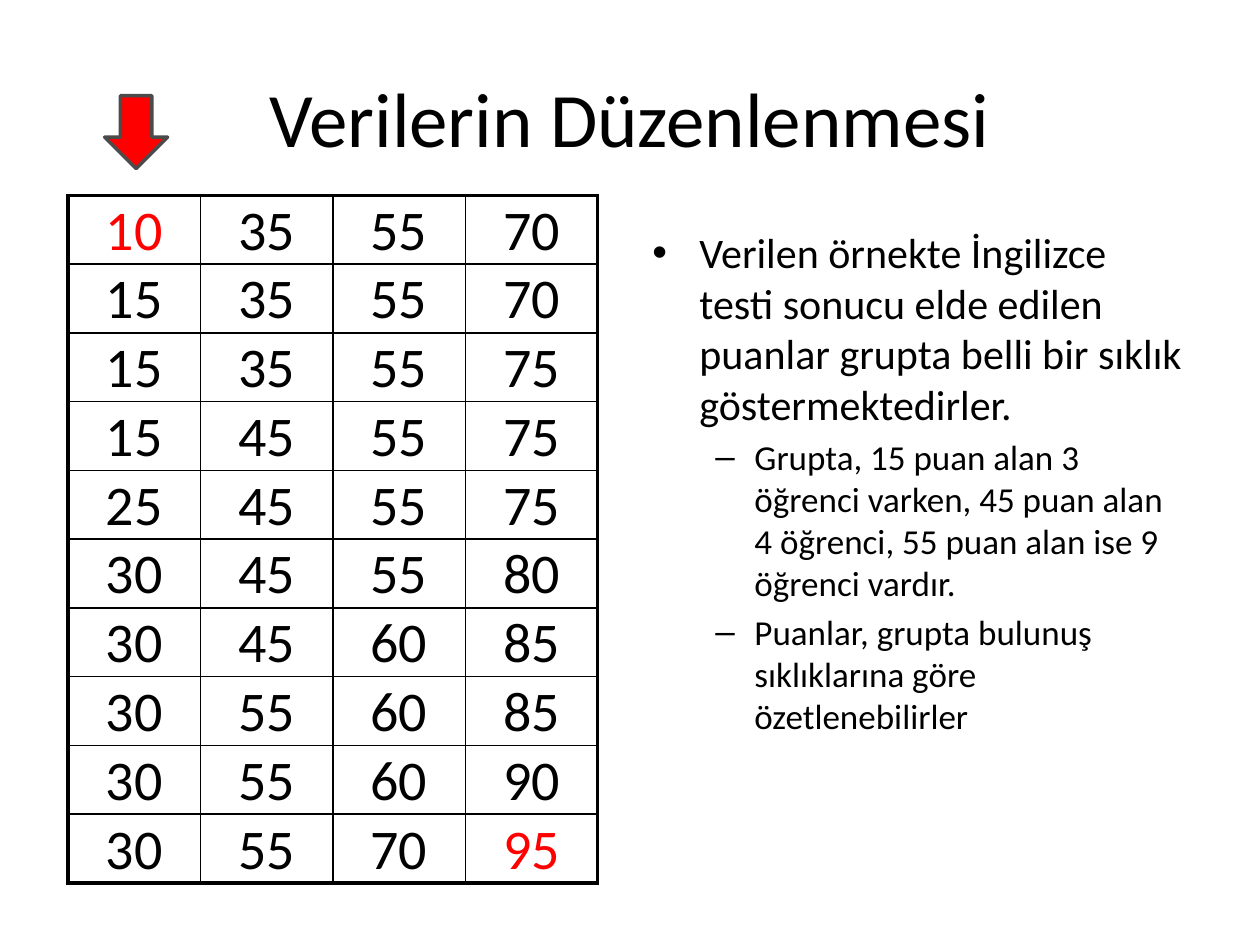
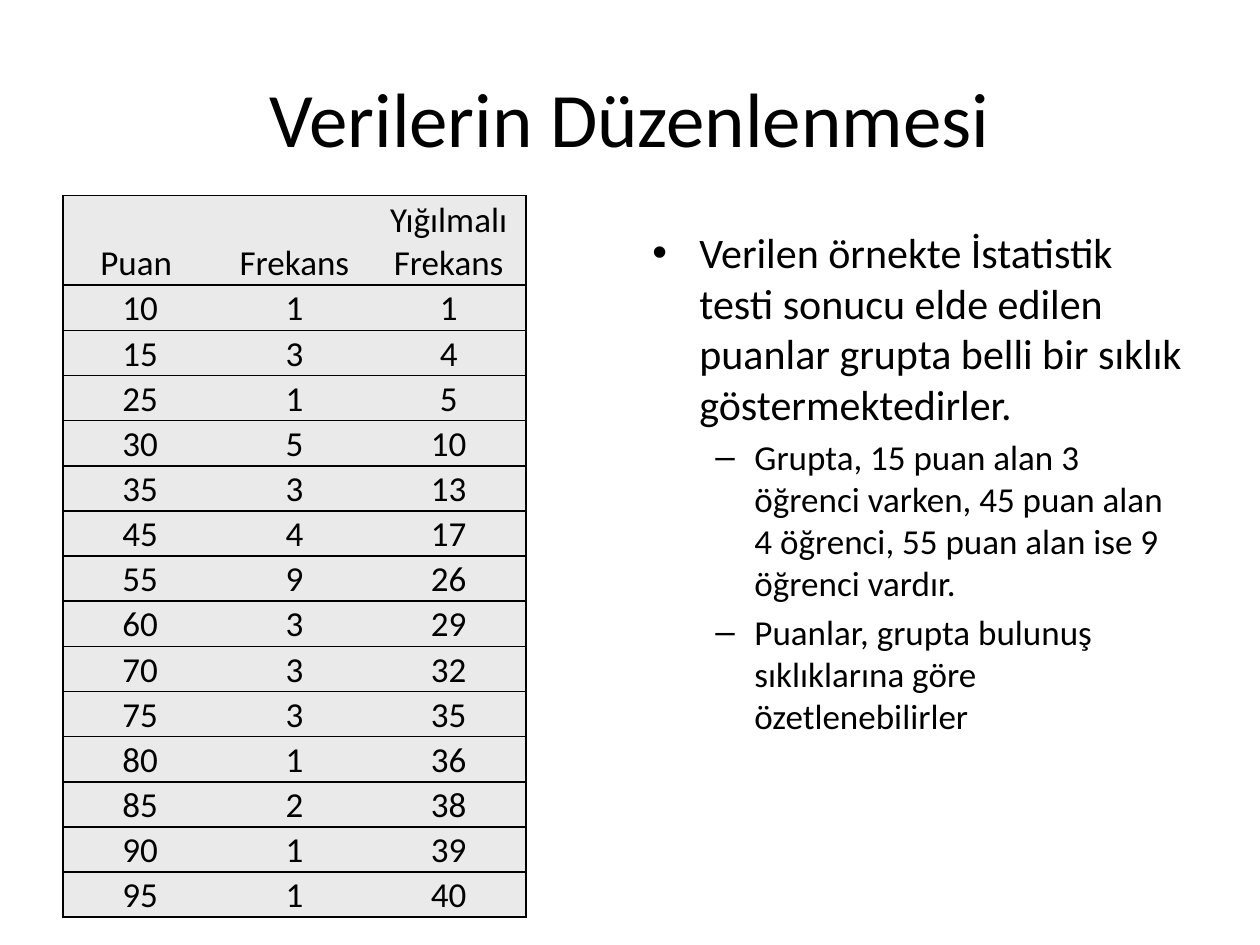
from itertools import accumulate
from lxml.etree import SubElement as Sub
from pptx import Presentation
from pptx.dml.color import RGBColor
from pptx.enum.shapes import MSO_SHAPE as Shape
from pptx.enum.text import MSO_ANCHOR as Anchor, PP_ALIGN as Align
from pptx.oxml.ns import qn
from pptx.util import Cm, Pt

# Content
TITLE = "Verilerin Düzenlenmesi"
TESTS = ["İngilizce", "İstatistik"]
MAIN = ("Verilen örnekte {} testi sonucu elde edilen puanlar "
        "grupta belli bir sıklık göstermektedirler.")
SUBS = [
    "Grupta, 15 puan alan 3 öğrenci varken, 45 puan alan 4 öğrenci, "
    "55 puan alan ise 9 öğrenci vardır.",
    "Puanlar, grupta bulunuş sıklıklarına göre özetlenebilirler",
]
HEAD = ("Puan ", "Frekans", "Yığılmalı Frekans")
FREQ = {10: 1, 15: 3, 25: 1, 30: 5, 35: 3, 45: 4, 55: 9,
        60: 3, 70: 3, 75: 3, 80: 1, 85: 2, 90: 1, 95: 1}

# Style
FONT = "Calibri"
BLACK = RGBColor(0x00, 0x00, 0x00)
RED = RGBColor(0xFF, 0x00, 0x00)
GREY = RGBColor(0x4B, 0x4B, 0x4B)
PALE = RGBColor(0xEA, 0xEA, 0xEA)
THIN, THICK = 1, 2.25
TOP = Cm(3.94)

# Bullet, size, left indent, hanging indent, space before
LEVELS = [("•", 24, 0.95, 0.95, 0), ("–", 20, 2.06, 0.79, 4)]


def style(para, size, color=BLACK):
    font = para.font
    font.name, font.size, font.color.rgb = FONT, Pt(size), color


def add_slide(deck, test):
    """Slide with the shared title and the bullet list on the right."""
    slide = deck.slides.add_slide(deck.slide_layouts[5])
    title = slide.shapes.title
    title.left, title.top = Cm(1.27), Cm(0.76)
    title.width, title.height = Cm(22.86), Cm(3.18)
    title.text = TITLE
    title.text_frame.vertical_anchor = Anchor.MIDDLE
    para = title.text_frame.paragraphs[0]
    para.alignment = Align.CENTER
    style(para, 44)

    box = slide.shapes.add_textbox(Cm(12.9), Cm(4.45), Cm(11.23), Cm(12.57))
    frame = box.text_frame
    frame.word_wrap = True
    for i, text in enumerate([MAIN.format(test)] + SUBS):
        para = frame.add_paragraph() if i else frame.paragraphs[0]
        para.text = text
        level = min(i, 1)
        mark, size, left, hang, gap = LEVELS[level]
        para.level = level
        para.space_before = Pt(gap)
        props = para._p.get_or_add_pPr()
        props.set("marL", str(Cm(left)))
        props.set("indent", str(-Cm(hang)))
        Sub(props, qn("a:buFont"), typeface="Arial")
        Sub(props, qn("a:buChar"), char=mark)
        style(para, size)
    return slide


def set_edge(cell, side, width):
    """Black line on one side of a cell; a width of 0 hides it."""
    line = Sub(cell._tc.get_or_add_tcPr(), qn("a:ln" + side),
               w=str(Pt(width)))
    if width:
        fill = Sub(line, qn("a:solidFill"))
        Sub(fill, qn("a:srgbClr"), val=str(BLACK))
    else:
        Sub(line, qn("a:noFill"))


def add_grid(slide, rows, left, wide, highs, size, outer, inner,
             fill=None, reds=()):
    """Table with an outer frame, row lines and inner column lines."""
    last, end = len(rows) - 1, len(rows[0]) - 1
    grid = slide.shapes.add_table(last + 1, end + 1, left, TOP,
                                  wide * (end + 1), sum(highs)).table
    grid.first_row = grid.horz_banding = False
    for col in grid.columns:
        col.width = wide
    for r, row in enumerate(rows):
        grid.rows[r].height = highs[r]
        for c, value in enumerate(row):
            cell = grid.cell(r, c)
            cell.text = str(value)
            cell.vertical_anchor = Anchor.BOTTOM
            cell.margin_left = cell.margin_right = cell.margin_top = Cm(0.03)
            cell.margin_bottom = 0
            para = cell.text_frame.paragraphs[0]
            para.alignment = Align.CENTER
            style(para, size, RED if value in reds else BLACK)
            set_edge(cell, "L", inner if c else outer)
            set_edge(cell, "R", inner if c < end else outer)
            set_edge(cell, "T", THIN if r else outer)
            set_edge(cell, "B", THIN if r < last else outer)
            if fill:
                cell.fill.solid()
                cell.fill.fore_color.rgb = fill
            else:
                cell.fill.background()


def main():
    deck = Presentation()
    deck.slide_width, deck.slide_height = Cm(25.4), Cm(19.05)
    first, second = [add_slide(deck, test) for test in TESTS]

    # Sorted scores, running down columns of ten
    deep = 10
    scores = [score for score, n in FREQ.items() for _ in range(n)]
    rows = [scores[r::deep] for r in range(deep)]
    add_grid(first, rows, Cm(1.37), Cm(2.67), [Cm(1.38)] * deep, 32,
             THICK, THIN, reds=(scores[0], scores[-1]))

    # Arrow above the first column
    arrow = first.shapes.add_shape(Shape.DOWN_ARROW, Cm(2.11), Cm(1.93),
                                   Cm(1.27), Cm(1.47))
    arrow.shadow.inherit = False
    arrow.fill.solid()
    arrow.fill.fore_color.rgb = RED
    arrow.line.color.rgb = GREY
    arrow.line.width = Pt(2)

    # Frequencies with running totals
    rows = [HEAD, *zip(FREQ, FREQ.values(), accumulate(FREQ.values()))]
    highs = [Cm(1.81)] + [Cm(0.91)] * len(FREQ)
    add_grid(second, rows, Cm(1.27), Cm(3.11), highs, 20,
             THIN, 0, fill=PALE)

    deck.save("out.pptx")


if __name__ == "__main__":
    main()
